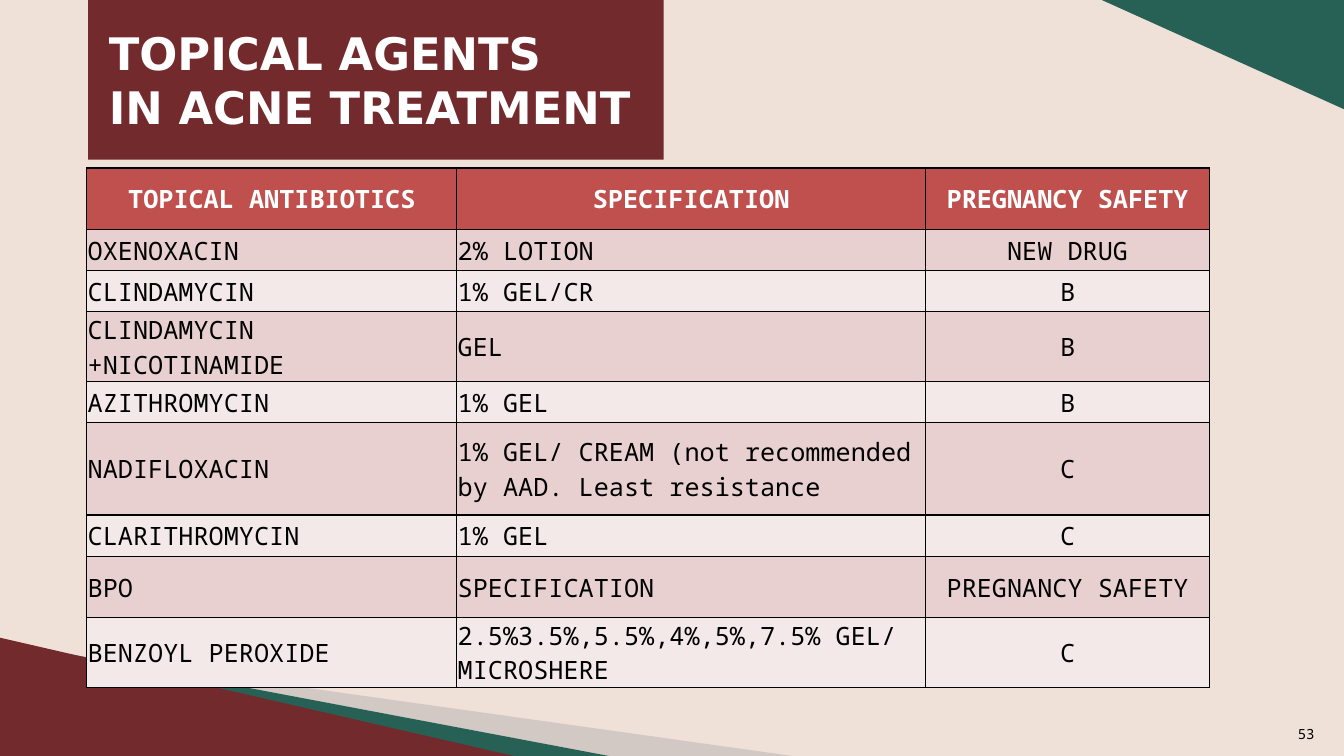
from lxml import etree
from pptx import Presentation
from pptx.dml.color import RGBColor
from pptx.enum import shapes, text
from pptx.oxml import parse_xml
from pptx.oxml.ns import nsdecls, qn
from pptx.util import Pt

MAROON = RGBColor(0x72, 0x2A, 0x2D)
GREEN = RGBColor(0x27, 0x61, 0x55)
CREAM = RGBColor(0xF0, 0xE1, 0xD8)
GREY = RGBColor(0xA6, 0xA6, 0xA6)
RED = RGBColor(0xC0, 0x50, 0x4D)
PINK = RGBColor(0xE8, 0xD0, 0xD0)
PALE = RGBColor(0xF4, 0xE9, 0xE9)
WHITE = RGBColor(0xFF, 0xFF, 0xFF)
BLACK = RGBColor(0, 0, 0)
MONO = "Noto Sans Mono"
LEFT, CENTER, RIGHT = text.PP_ALIGN.LEFT, text.PP_ALIGN.CENTER, text.PP_ALIGN.RIGHT


def write(tf, content, size=18, font=MONO, color=BLACK, bold=False, align=LEFT):
    tf.word_wrap = True
    for i, line in enumerate(content.split("\n")):
        p = tf.paragraphs[0] if i == 0 else tf.add_paragraph()
        p.alignment = align
        r = p.add_run()
        r.text = line
        r.font.size = Pt(size)
        r.font.name = font
        r.font.bold = bold
        r.font.color.rgb = color


def paint(sp, color):
    sp.shadow.inherit = False
    sp.fill.solid()
    sp.fill.fore_color.rgb = color
    sp.line.fill.background()


prs = Presentation()
prs.slide_width, prs.slide_height = Pt(960), Pt(540)
s = prs.slides.add_slide(prs.slide_layouts[5])
s.background.fill.solid()
s.background.fill.fore_color.rgb = CREAM

# Bottom stripes: translucent grey, then green
stripes = [
    (GREY, [(52.5, 468), (566, 540), (435, 540)]),
    (GREEN, [(51, 467.5), (435, 540), (355, 540)]),
]
for color, points in stripes:
    fb = s.shapes.build_freeform(Pt(points[0][0]), Pt(points[0][1]))
    fb.add_line_segments([(Pt(x), Pt(y)) for x, y in points[1:]], close=True)
    sp = fb.convert_to_shape()
    paint(sp, color)
    if color == GREY:
        clr = sp.element.spPr.find(qn("a:solidFill"))[0]
        etree.SubElement(clr, qn("a:alpha")).set("val", "40000")

# Corner triangles and title block
blocks = [
    (shapes.MSO_SHAPE.RIGHT_TRIANGLE, 0, 455.5, 367, 84.5, 0, MAROON),
    (shapes.MSO_SHAPE.RIGHT_TRIANGLE, 787, 0, 173, 78, 180, GREEN),
    (shapes.MSO_SHAPE.RECTANGLE, 63, 0, 411, 114, 0, MAROON),
]
for kind, x, y, w, h, rotation, color in blocks:
    sp = s.shapes.add_shape(kind, Pt(x), Pt(y), Pt(w), Pt(h))
    sp.rotation = rotation
    paint(sp, color)

# Title, brought in front of its block
title = s.shapes.title
title.left, title.top, title.width, title.height = Pt(70.5), Pt(15), Pt(396), Pt(85)
title.text_frame.vertical_anchor = text.MSO_ANCHOR.TOP
title.text_frame.auto_size = text.MSO_AUTO_SIZE.SHAPE_TO_FIT_TEXT
write(title.text_frame, "TOPICAL AGENTS\nIN ACNE TREATMENT", size=32,
      font="DejaVu Sans", color=WHITE, bold=True)
title.element.getparent().append(title.element)

# Drug table, with two-line rows tall enough for their text
rows = [
    (44, "TOPICAL ANTIBIOTICS", "SPECIFICATION", "PREGNANCY SAFETY"),
    (29.4, "OXENOXACIN", "2% LOTION", "NEW DRUG"),
    (29.4, "CLINDAMYCIN", "1% GEL/CR", "B"),
    (49.7, "CLINDAMYCIN +NICOTINAMIDE", "GEL", "B"),
    (29.4, "AZITHROMYCIN", "1% GEL", "B"),
    (66, "NADIFLOXACIN", "1% GEL/ CREAM (not recommended by AAD. Least resistance", "C"),
    (29.4, "CLARITHROMYCIN", "1% GEL", "C"),
    (44, "BPO", "SPECIFICATION", "PREGNANCY SAFETY"),
    (49.7, "BENZOYL PEROXIDE", "2.5%3.5%,5.5%,4%,5%,7.5% GEL/ MICROSHERE", "C"),
]
widths = [264.3, 334.8, 203]
table = s.shapes.add_table(len(rows), len(widths), Pt(62), Pt(120), Pt(sum(widths)),
                           Pt(sum(row[0] for row in rows))).table
for col, width in zip(table.columns, widths):
    col.width = Pt(width)
for i, (height, *values) in enumerate(rows):
    table.rows[i].height = Pt(height)
    header = i == 0
    for j, value in enumerate(values):
        cell = table.cell(i, j)
        cell.margin_left = cell.margin_right = cell.margin_top = Pt(0.7)
        cell.margin_bottom = Pt(0)
        cell.vertical_anchor = text.MSO_ANCHOR.MIDDLE
        write(cell.text_frame, value, color=WHITE if header else BLACK, bold=header,
              align=CENTER if header or j == 2 else LEFT)
        tcPr = cell._tc.get_or_add_tcPr()
        for side in ("lnL", "lnR", "lnT", "lnB"):
            tcPr.append(parse_xml(
                f'<a:{side} {nsdecls("a")} w="12700"><a:solidFill>'
                f'<a:srgbClr val="{BLACK}"/></a:solidFill></a:{side}>'))
        cell.fill.solid()
        cell.fill.fore_color.rgb = RED if header else PINK if i % 2 else PALE

# Page number
tb = s.shapes.add_textbox(Pt(908), Pt(504.5), Pt(38), Pt(29))
tb.text_frame.vertical_anchor = text.MSO_ANCHOR.BOTTOM
write(tb.text_frame, "53", size=10, align=RIGHT)

prs.save("out.pptx")
